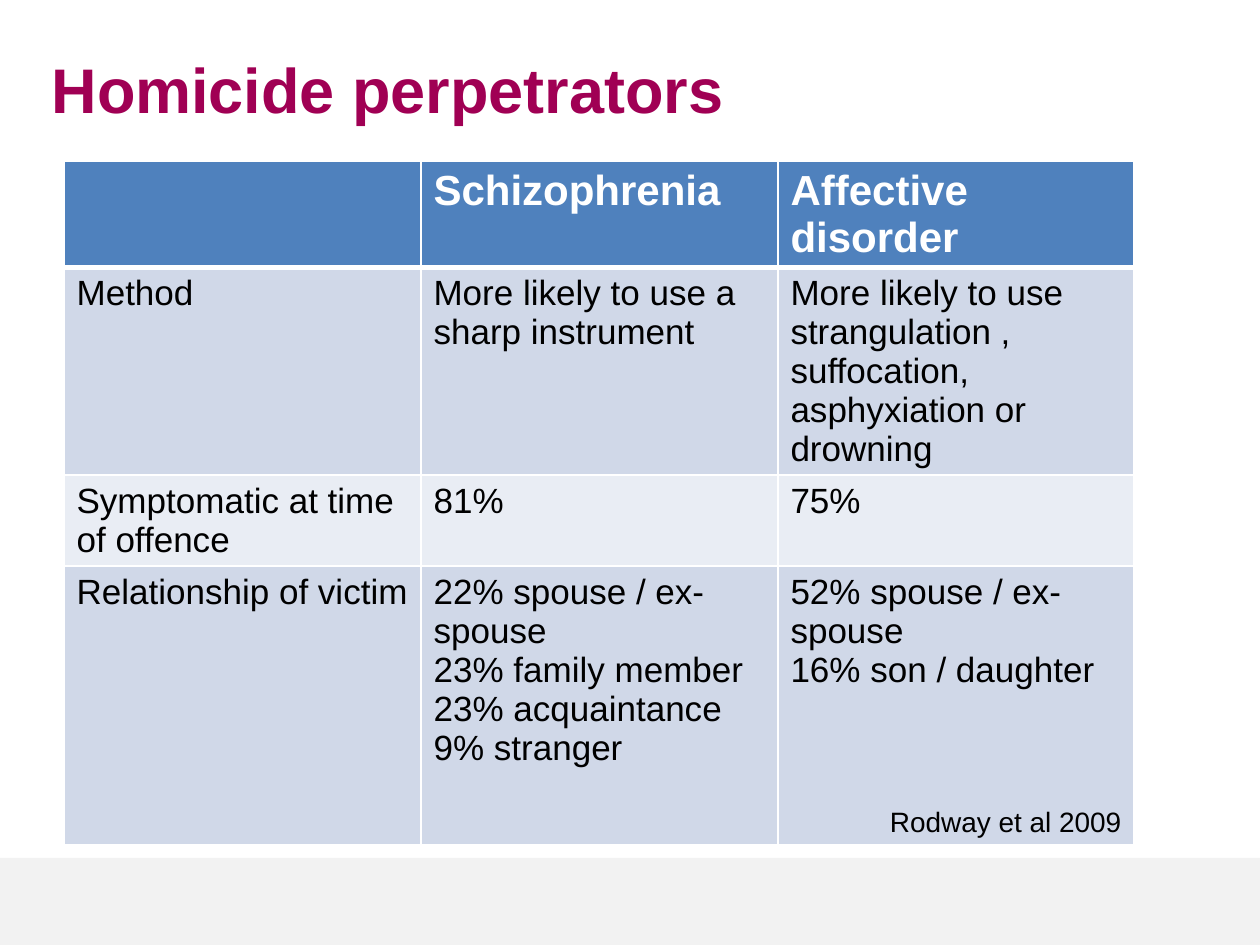
import dataclasses

import lxml.etree
import pptx
import pptx.dml.color
import pptx.enum.shapes
import pptx.enum.text
import pptx.oxml.ns
import pptx.util

EMU_PER_PX = 914400 / 126


@dataclasses.dataclass(frozen=True)
class Theme:
    """Colours, font and type sizes of the slide."""
    font: str = "Arial"
    title: str = "A00054"
    header: str = "4F81BD"
    bands: tuple = ("D0D8E8", "E9EDF4")
    footer: str = "F2F2F2"
    white: str = "FFFFFF"
    text: str = "000000"
    title_size: int = 36
    header_size: int = 24
    body_size: int = 20
    citation_size: int = 16
    citation_gap: int = 67
    thin_border: int = 1
    thick_border: int = 3


THEME = Theme()
COLUMN_WIDTHS = (357, 357, 356)
ROW_HEIGHTS = (106, 207, 91, 277)
CITATION = "Rodway et al 2009"
ROWS = (
    ((), ("Schizophrenia",), ("Affective disorder",)),
    (("Method",), ("More likely to use a sharp instrument",),
     ("More likely to use strangulation , suffocation, asphyxiation or drowning",)),
    (("Symptomatic at time of offence",), ("81%",), ("75%",)),
    (("Relationship of victim",),
     ("22% spouse / ex-spouse", "23% family member", "23% acquaintance", "9% stranger"),
     ("52% spouse / ex-spouse", "16% son / daughter")),
)


def px(length):
    """Turn pixels into EMU."""
    return pptx.util.Emu(round(length * EMU_PER_PX))


def rgb(colour):
    """Turn a hex string into a colour."""
    return pptx.dml.color.RGBColor.from_string(colour)


def add_run(paragraph, text, size, colour, bold=False):
    """Add one formatted run to a paragraph."""
    run = paragraph.add_run()
    run.text = text
    run.font.name = THEME.font
    run.font.size = pptx.util.Pt(size)
    run.font.bold = bold
    run.font.color.rgb = rgb(colour)


def add_footer_band(slide):
    """Draw the pale band along the foot of the slide."""
    shape = slide.shapes.add_shape(
        pptx.enum.shapes.MSO_SHAPE.RECTANGLE, px(0), px(858), px(1260), px(87))
    shape.shadow.inherit = False
    shape.fill.solid()
    shape.fill.fore_color.rgb = rgb(THEME.footer)
    shape.line.fill.background()


def set_title(slide, text):
    """Place and format the title."""
    title = slide.shapes.title
    title.left, title.top, title.width, title.height = px(39), px(42), px(1071), px(93)
    title.text_frame.vertical_anchor = pptx.enum.text.MSO_ANCHOR.MIDDLE
    paragraph = title.text_frame.paragraphs[0]
    paragraph.alignment = pptx.enum.text.PP_ALIGN.LEFT
    add_run(paragraph, text, THEME.title_size, THEME.title, True)


def set_borders(cell, top, bottom):
    """Give a cell white borders, with top and bottom widths in points."""
    properties = cell._tc.get_or_add_tcPr()
    widths = {"lnL": THEME.thin_border, "lnR": THEME.thin_border, "lnT": top, "lnB": bottom}
    for tag, width in widths.items():
        line = lxml.etree.SubElement(
            properties, pptx.oxml.ns.qn(f"a:{tag}"), w=str(pptx.util.Pt(width)))
        fill = lxml.etree.SubElement(line, pptx.oxml.ns.qn("a:solidFill"))
        lxml.etree.SubElement(fill, pptx.oxml.ns.qn("a:srgbClr"), val=THEME.white)


def fill_cell(cell, row_index, lines):
    """Set the borders, fill and text of one cell."""
    header = row_index == 0
    set_borders(cell,
                THEME.thick_border if row_index == 1 else THEME.thin_border,
                THEME.thick_border if header else THEME.thin_border)
    cell.fill.solid()
    cell.fill.fore_color.rgb = rgb(THEME.header if header else THEME.bands[(row_index - 1) % 2])
    size = THEME.header_size if header else THEME.body_size
    colour = THEME.white if header else THEME.text
    for index, text in enumerate(lines):
        frame = cell.text_frame
        paragraph = frame.add_paragraph() if index else frame.paragraphs[0]
        add_run(paragraph, text, size, colour, header)


def add_citation(cell, text):
    """Add a right-aligned source line below the text of a cell."""
    paragraph = cell.text_frame.add_paragraph()
    paragraph.alignment = pptx.enum.text.PP_ALIGN.RIGHT
    paragraph.space_before = pptx.util.Pt(THEME.citation_gap)
    add_run(paragraph, text, THEME.citation_size, THEME.text)


def add_comparison_table(slide):
    """Add the table that compares the two diagnoses."""
    table = slide.shapes.add_table(
        len(ROWS), len(COLUMN_WIDTHS), px(64), px(161),
        px(sum(COLUMN_WIDTHS)), px(sum(ROW_HEIGHTS))).table
    for column, width in zip(table.columns, COLUMN_WIDTHS):
        column.width = px(width)
    for row_index, (row, height) in enumerate(zip(table.rows, ROW_HEIGHTS)):
        row.height = px(height)
        for cell, lines in zip(row.cells, ROWS[row_index]):
            fill_cell(cell, row_index, lines)
    add_citation(table.cell(len(ROWS) - 1, len(COLUMN_WIDTHS) - 1), CITATION)


def main():
    """Build and save the presentation."""
    presentation = pptx.Presentation()
    presentation.slide_width, presentation.slide_height = px(1260), px(945)
    slide = presentation.slides.add_slide(presentation.slide_layouts[5])
    add_footer_band(slide)
    set_title(slide, "Homicide perpetrators")
    add_comparison_table(slide)
    presentation.save("out.pptx")


if __name__ == "__main__":
    main()
